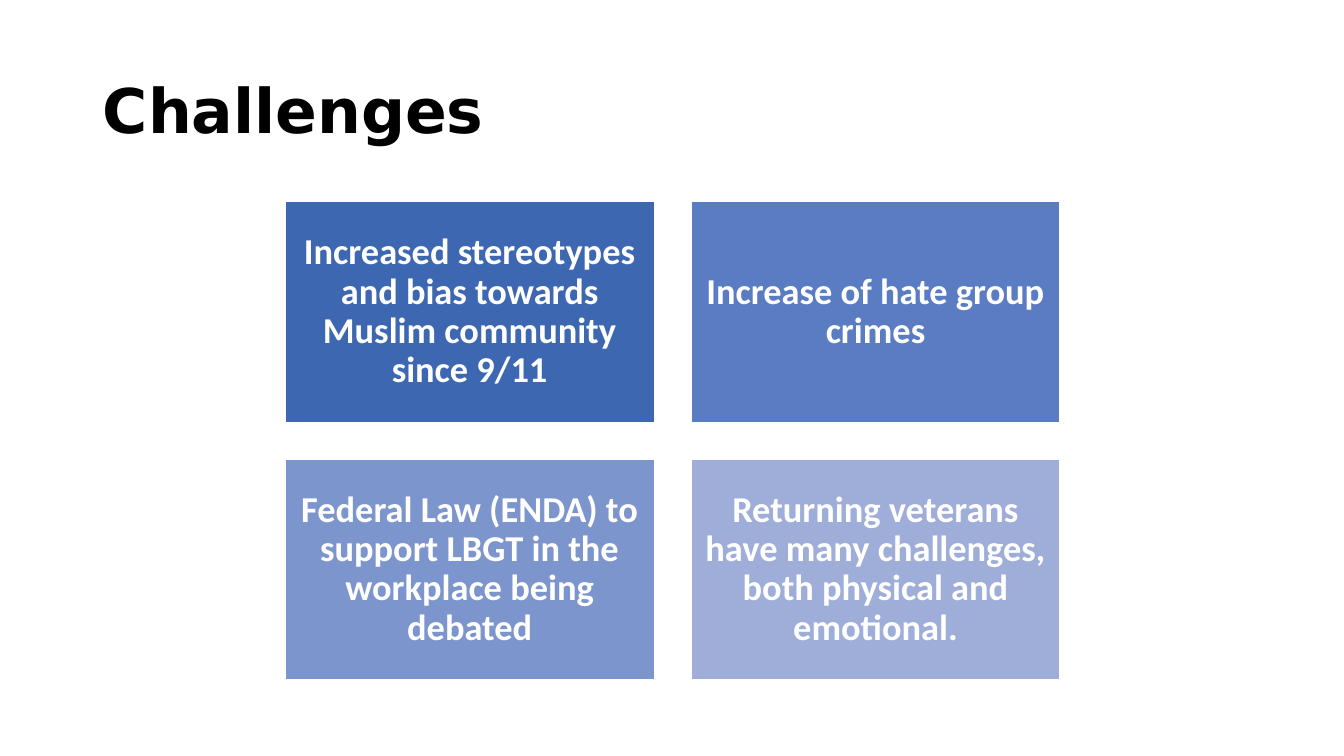
"""Build the Challenges slide: a title above a two-by-two grid of coloured cards."""
from dataclasses import dataclass

from pptx import Presentation
from pptx.dml.color import RGBColor
from pptx.enum.shapes import MSO_SHAPE as Shape
from pptx.enum.text import MSO_ANCHOR as Anchor, PP_ALIGN as Align
from pptx.slide import Slide
from pptx.text.text import _Paragraph as Paragraph
from pptx.util import Inches, Pt

COLORS = {
    "black": "000000",
    "white": "FFFFFF",
    "deep": "3E67B2",
    "strong": "5A7CC3",
    "medium": "7D95CD",
    "pale": "9FAED8",
}
LEFT, TOP = 2.83, 2.0
CARD_W, CARD_H = 3.66, 2.19
GAP = 0.365
INSET = 0.11


@dataclass(frozen=True)
class Card:
    col: int
    row: int
    color: str
    text: str


CARDS = [
    Card(0, 0, "deep", "Increased stereotypes and bias towards Muslim community since 9/11"),
    Card(1, 0, "strong", "Increase of hate group crimes"),
    Card(0, 1, "medium", "Federal Law (ENDA) to support LBGT in the workplace being debated"),
    Card(1, 1, "pale", "Returning veterans have many challenges, both physical and emotional."),
]


def rgb(name: str) -> RGBColor:
    return RGBColor.from_string(COLORS[name])


def style(p: Paragraph, font: str, size: int, color: str, align: Align) -> None:
    p.alignment = align
    p.line_spacing = 0.9
    p.font.name = font
    p.font.size = Pt(size)
    p.font.bold = True
    p.font.color.rgb = rgb(color)


def add_title(s: Slide, text: str) -> None:
    title = s.shapes.title
    title.left, title.top = Inches(0.92), Inches(0.4)
    title.width, title.height = Inches(11.5), Inches(1.45)
    tf = title.text_frame
    tf.text = text
    tf.vertical_anchor = Anchor.MIDDLE
    style(tf.paragraphs[0], "DejaVu Sans", 44, "black", Align.LEFT)


def add_card(s: Slide, card: Card) -> None:
    sp = s.shapes.add_shape(
        Shape.RECTANGLE,
        Inches(LEFT + card.col * (CARD_W + GAP)),
        Inches(TOP + card.row * (CARD_H + GAP)),
        Inches(CARD_W),
        Inches(CARD_H),
    )
    sp.shadow.inherit = False
    sp.fill.solid()
    sp.fill.fore_color.rgb = rgb(card.color)
    sp.line.color.rgb = rgb("white")
    sp.line.width = Pt(1)
    tf = sp.text_frame
    tf.word_wrap = True
    tf.vertical_anchor = Anchor.MIDDLE
    tf.margin_left = tf.margin_right = tf.margin_top = tf.margin_bottom = Inches(INSET)
    tf.text = card.text
    style(tf.paragraphs[0], "Calibri", 26, "white", Align.CENTER)


def main() -> None:
    prs = Presentation()
    prs.slide_width, prs.slide_height = Inches(13.33), Inches(7.5)
    s = prs.slides.add_slide(prs.slide_layouts.get_by_name("Title Only"))
    add_title(s, "Challenges")
    for card in CARDS:
        add_card(s, card)
    prs.save("out.pptx")


if __name__ == "__main__":
    main()
